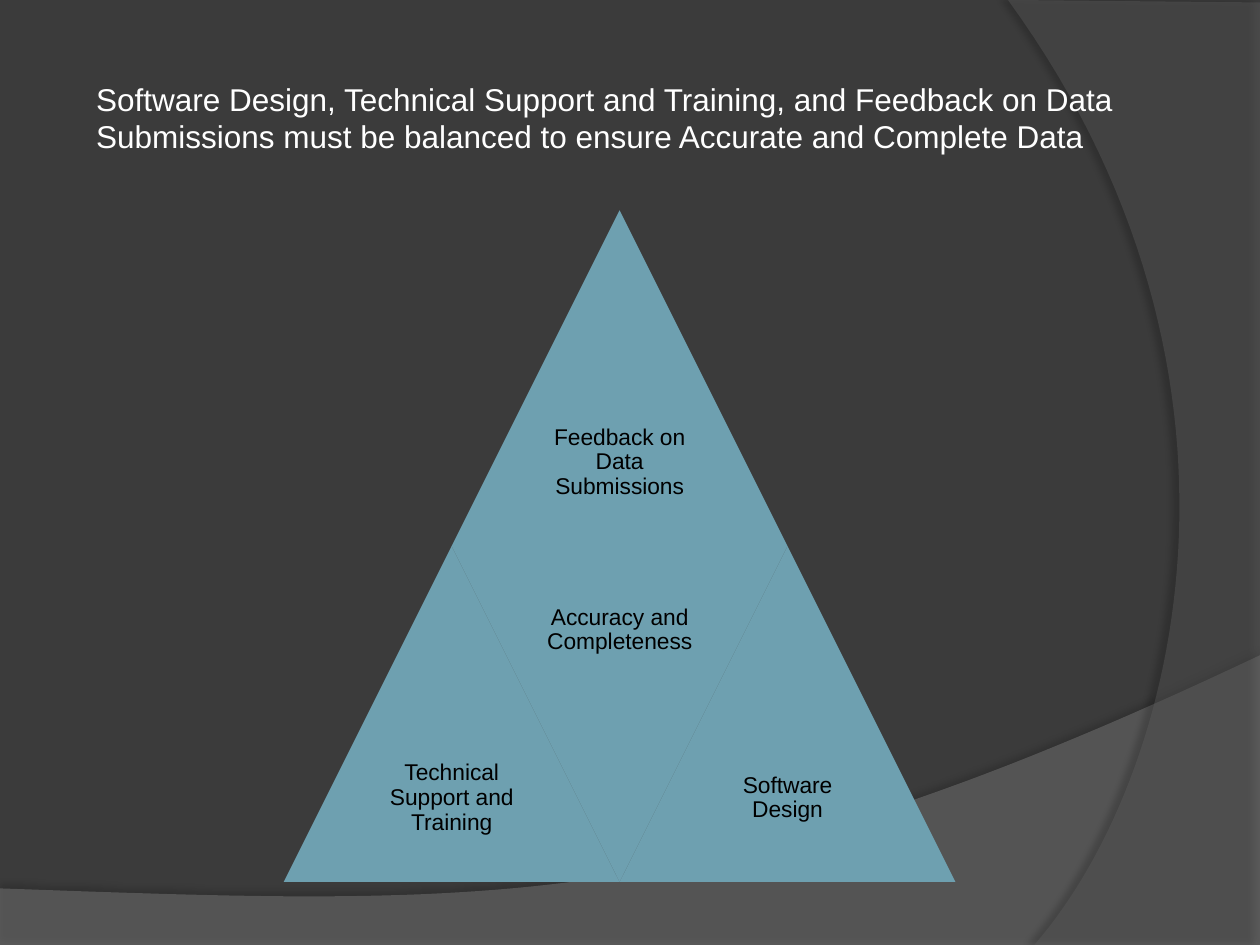
from lxml import etree
from pptx import Presentation, util as u
from pptx.dml.color import RGBColor
from pptx.enum import shapes, text
from pptx.oxml import ns

HUES = {"back": "3B3B3B", "wave": "7F7F7F", "arc": "5E5E5E", "tile": "6EA0B0",
        "black": "000000", "white": "FFFFFF"}


def paint(fill, hue):
    fill.solid()
    fill.fore_color.rgb = RGBColor.from_string(HUES[hue])


def write(box, words, size, hue, form):
    """Put one paragraph in a text box; form holds text frame settings."""
    frame = box.text_frame
    for key, val in form.items():
        setattr(frame, key, val)
    para = frame.paragraphs[0]
    run = para.add_run()
    run.text = words
    run.font.name, run.font.size = "Arial", u.Pt(size)
    run.font.color.rgb = RGBColor.from_string(HUES[hue])
    return para


deck = Presentation()
deck.slide_width, deck.slide_height = u.Cm(25.4), u.Cm(19.05)
slide = deck.slides.add_slide(deck.slide_layouts[6])
paint(slide.background.fill, "back")

# Backdrop: hue, opacity %, shadow (opacity %, blur, distance, angle),
# straight points, then a Bezier curve from the last of them (all in cm)
drops = [
    ("wave", 45, (35, 4, 3.5, 270),
     [(0, 17.91), (0, 19.08), (25.4, 19.08), (25.4, 13.21)],
     [(14.2, 18.52), (9.93, 18.26), (0, 17.91)]),
    ("arc", 40, (45, 4, 4, 180),
     [(25.4, 0.05), (25.4, 19.05), (20.85, 19.05)],
     [(23.75, 15.72), (25.86, 7.62), (20.32, 0)]),
]
STEPS = 60
for hue, alpha, (dark, blur, dist, angle), line, bend in drops:
    knots = [line[-1]] + bend
    curve = []
    for step in range(1, STEPS + 1):
        t = step / STEPS
        parts = ((1 - t) ** 3, 3 * t * (1 - t) ** 2, 3 * t * t * (1 - t), t ** 3)
        curve.append([sum(w * k[axis] for w, k in zip(parts, knots)) for axis in (0, 1)])
    dots = [(u.Cm(x), u.Cm(y)) for x, y in line + curve]
    pen = slide.shapes.build_freeform(*dots[0])
    pen.add_line_segments(dots[1:], close=True)
    drop = pen.convert_to_shape()
    drop.line.fill.background()
    paint(drop.fill, hue)
    drop.shadow.inherit = False
    props = drop.element.spPr
    tint = props.find(ns.qn("a:solidFill"))[0]
    etree.SubElement(tint, ns.qn("a:alpha"), val=str(alpha * 1000))
    shade = etree.SubElement(
        props.find(ns.qn("a:effectLst")), ns.qn("a:outerShdw"),
        blurRad=str(u.Pt(blur)), dist=str(u.Pt(dist)), dir=str(angle * 60000),
        algn="ctr", rotWithShape="0")
    tone = etree.SubElement(shade, ns.qn("a:srgbClr"), val=HUES["black"])
    etree.SubElement(tone, ns.qn("a:alpha"), val=str(dark * 1000))

# Pyramid of four tiles: words, column in half sides, row, turn
SIDE, LEFT, TOP = 6.77, 5.72, 4.24
HALF = SIDE / 2
tiles = [
    ("Feedback on Data Submissions", 1, 0, 0),
    ("Technical Support and Training", 0, 1, 0),
    ("Accuracy and Completeness", 1, 1, 180),
    ("Software Design", 2, 1, 0),
]
inset = u.Cm(0.13)
form = {"word_wrap": True, "vertical_anchor": text.MSO_ANCHOR.MIDDLE,
        "margin_left": inset, "margin_right": inset,
        "margin_top": inset, "margin_bottom": inset}
group = slide.shapes.add_group_shape()
for words, col, row, turn in tiles:
    x, y = LEFT + col * HALF, TOP + row * SIDE
    tile = group.shapes.add_shape(shapes.MSO_SHAPE.ISOSCELES_TRIANGLE,
                                  u.Cm(x), u.Cm(y), u.Cm(SIDE), u.Cm(SIDE))
    tile.rotation = turn
    tile.shadow.inherit = False
    tile.line.fill.background()
    paint(tile.fill, "tile")
    drop = 0 if turn else HALF
    label = group.shapes.add_textbox(u.Cm(x + HALF / 2), u.Cm(y + drop),
                                     u.Cm(HALF), u.Cm(HALF))
    para = write(label, words, 13, "black", form)
    para.alignment, para.line_spacing = text.PP_ALIGN.CENTER, 0.9

title = slide.shapes.add_textbox(u.Cm(1.69), u.Cm(1.48), u.Cm(21.59), u.Cm(1.8))
write(title, "Software Design, Technical Support and Training, and Feedback on Data "
      "Submissions must be balanced to ensure Accurate and Complete Data",
      18, "white", {"word_wrap": True, "auto_size": text.MSO_AUTO_SIZE.SHAPE_TO_FIT_TEXT})

deck.save("out.pptx")
